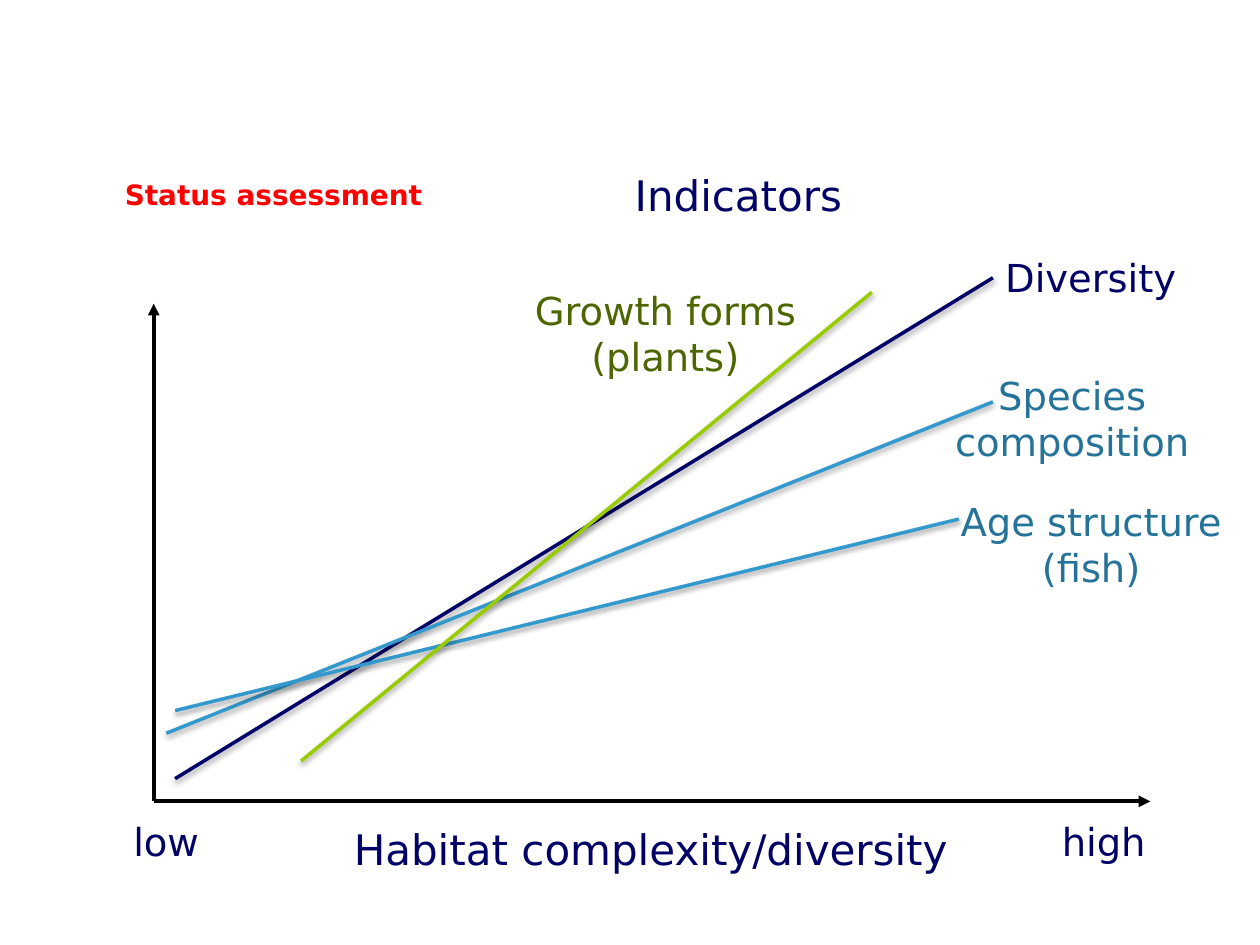
import pptx
import pptx.util
import pptx.dml.color
import pptx.enum.shapes
import pptx.enum.text
import pptx.oxml
import pptx.oxml.ns
from dataclasses import dataclass

Inches = pptx.util.Inches
Pt = pptx.util.Pt
Align = pptx.enum.text.PP_ALIGN
Anchor = pptx.enum.text.MSO_ANCHOR


@dataclass(frozen=True)
class Theme:
    font: str = "DejaVu Sans"
    navy: str = "000066"
    blue: str = "3399CC"
    teal: str = "267399"
    lime: str = "99CC00"
    olive: str = "4D6600"
    red: str = "FF0000"
    black: str = "000000"
    title: int = 16
    head: int = 24
    label: int = 22
    axis: float = 2.25
    trend: float = 2


THEME = Theme()
SHADOW = (
    '<a:outerShdw blurRad="39400" dist="20300" dir="5400000" rotWithShape="0">'
    '<a:srgbClr val="000000"><a:alpha val="38000"/></a:srgbClr></a:outerShdw>'
)


def rgb(color):
    return pptx.dml.color.RGBColor.from_string(color)


def parse_xml(tag, attrs="", inner=""):
    names = pptx.oxml.ns.nsdecls("a")
    return pptx.oxml.parse_xml(f"<a:{tag} {names} {attrs}>{inner}</a:{tag}>")


def add_run(para, text, size, color, bold=False):
    run = para.add_run()
    run.text = text
    font = run.font
    font.name, font.size, font.bold = THEME.font, Pt(size), bold
    font.color.rgb = rgb(color)


def place(shape, left, top, width, height):
    shape.left, shape.top = Inches(left), Inches(top)
    shape.width, shape.height = Inches(width), Inches(height)


def add_title(slide, text, *area):
    title = slide.shapes.title
    place(title, *area)
    frame = title.text_frame
    frame.vertical_anchor = Anchor.MIDDLE
    para = frame.paragraphs[0]
    para.alignment = Align.LEFT
    add_run(para, text, THEME.title, THEME.red, bold=True)


def add_label(slide, lines, area, color=THEME.navy, size=THEME.label,
              align=Align.LEFT, wrap=False):
    box = slide.shapes.add_textbox(*map(Inches, area))
    frame = box.text_frame
    frame.word_wrap = wrap
    frame.auto_size = pptx.enum.text.MSO_AUTO_SIZE.SHAPE_TO_FIT_TEXT
    for i, text in enumerate(lines):
        para = frame.add_paragraph() if i else frame.paragraphs[0]
        para.alignment = align
        add_run(para, text, size, color)
    return box


def add_line(slide, start, end, color, width, effect=""):
    kind = pptx.enum.shapes.MSO_CONNECTOR.STRAIGHT
    line = slide.shapes.add_connector(kind, *map(Inches, start + end))
    line.line.color.rgb = rgb(color)
    line.line.width = Pt(width)
    line._element.spPr.append(parse_xml("effectLst", inner=effect))
    return line


def add_axis(slide, start, end):
    axis = add_line(slide, start, end, THEME.black, THEME.axis)
    axis.line._get_or_add_ln().append(parse_xml("tailEnd", 'type="triangle"'))


def add_trend(slide, start, end, color):
    return add_line(slide, start, end, color, THEME.trend, SHADOW)


def main():
    deck = pptx.Presentation()
    deck.slide_width, deck.slide_height = Inches(10), Inches(7.5)
    slide = deck.slides.add_slide(deck.slide_layouts[5])

    add_title(slide, "Status assessment", 0.89, 1.35, 5.42, 0.39)
    add_label(slide, ["Indicators"], (2.57, 1.3, 6.58, 0.5),
              size=THEME.head, align=Align.CENTER, wrap=True)

    origin = (1.22, 6.36)
    for tip in [(9.13, 6.36), (1.22, 2.41)]:
        add_axis(slide, origin, tip)
    add_label(slide, ["low"], (0.96, 6.44, 0.73, 0.47))
    add_label(slide, ["high"], (8.33, 6.44, 0.87, 0.47))
    add_label(slide, ["Habitat complexity/diversity"],
              (2.71, 6.49, 4.98, 0.5), size=THEME.head)

    rise = add_trend(slide, (1.39, 6.18), (7.88, 2.2), THEME.navy)
    name = add_label(slide, ["Diversity"], (7.88, 1.97, 1.57, 0.47))
    rise.end_connect(name, 1)

    trends = [
        (["Species", "composition"], (7.48, 2.9, 2.06, 0.84), THEME.teal,
         (1.32, 5.82), (7.88, 3.19), THEME.blue),
        (["Age structure", "(fish)"], (7.51, 3.9, 2.3, 0.84), THEME.teal,
         (1.39, 5.64), (7.61, 4.12), THEME.blue),
        (["Growth forms", "(plants)"], (4.12, 2.23, 2.32, 0.84), THEME.olive,
         (2.39, 6.04), (6.92, 2.32), THEME.lime),
    ]
    for lines, area, ink, start, end, color in trends:
        add_trend(slide, start, end, color)
        add_label(slide, lines, area, ink, align=Align.CENTER)

    deck.save("out.pptx")


if __name__ == "__main__":
    main()
